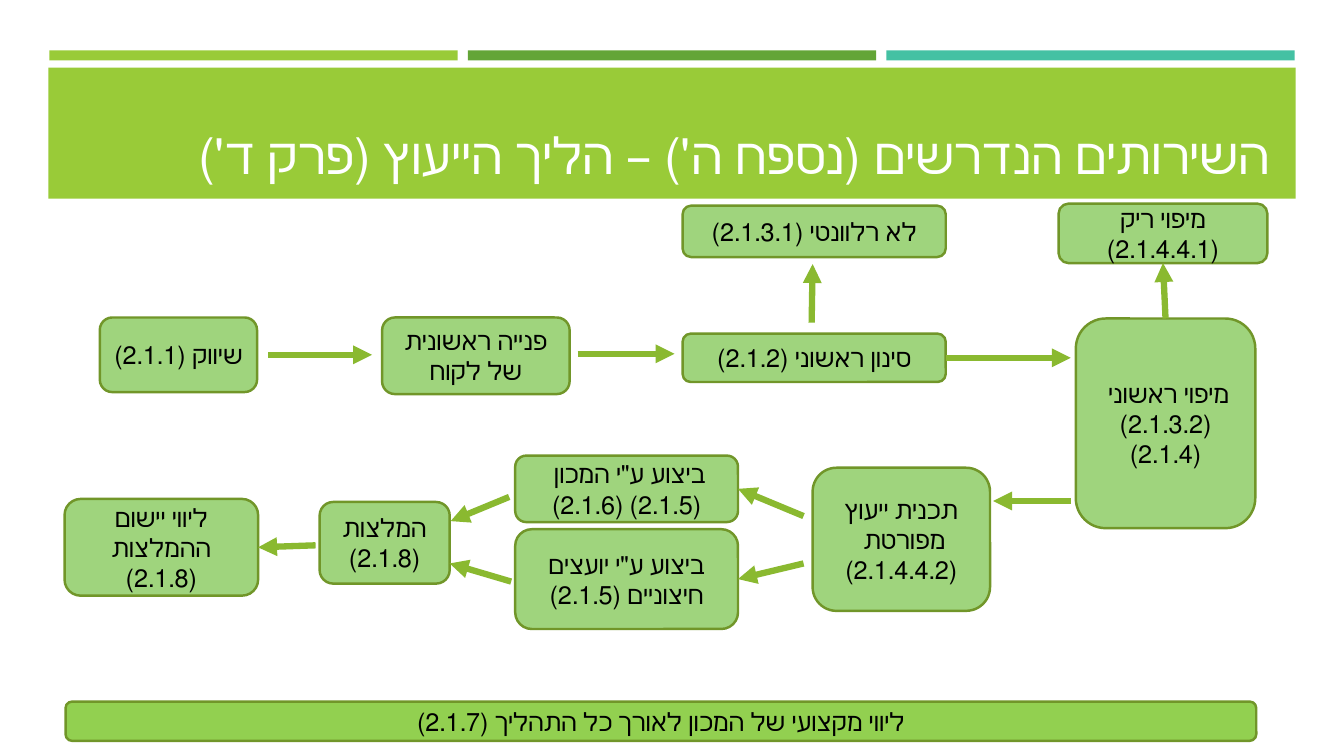
from lxml.etree import SubElement as Sub
from pptx import Presentation
from pptx.dml.color import RGBColor as Rgb
from pptx.enum.shapes import MSO_CONNECTOR as Link, MSO_SHAPE as Form
from pptx.enum.text import MSO_ANCHOR as Anchor, PP_ALIGN as Align
from pptx.oxml.ns import qn
from pptx.util import Inches, Pt

theme = {
    "lime": "99CB38", "green": "63A537", "teal": "44C1A3",
    "box": "9FD47D", "strip": "92D050", "edge": "719629", "arrow": "8AB930",
    "white": "FFFFFF", "black": "000000",
    "font": "Calibri", "head": Pt(36), "body": Pt(18),
    "rim": Pt(1.75), "stroke": Pt(4.5),
}


def draw(form, place, fill):
    shape = slide.shapes.add_shape(form, *map(Inches, place))
    shape.shadow.inherit = False
    shape.fill.solid()
    shape.fill.fore_color.rgb = Rgb.from_string(theme[fill])
    shape.line.fill.background()
    return shape


def write(shape, text, anchor, align, size, color):
    frame = shape.text_frame
    frame.text = text
    for name, value in {"word_wrap": True, "vertical_anchor": anchor}.items():
        setattr(frame, name, value)
    for para in frame.paragraphs:
        para.alignment = align
        para._p.get_or_add_pPr().set("rtl", "1")
        font = para.runs[0].font
        for name, value in {"name": theme["font"], "size": theme[size]}.items():
            setattr(font, name, value)
        font.color.rgb = Rgb.from_string(theme[color])


deck = Presentation()
deck.slide_width, deck.slide_height = Inches(13.33), Inches(7.5)
slide = deck.slides.add_slide(deck.slide_layouts[5])

# Header bars and band
for col, fill in enumerate(("lime", "green", "teal")):
    draw(Form.RECTANGLE, (0.49 + col * 4.15, 0.5, 4.05, 0.1), fill)
band = draw(Form.RECTANGLE, (0.48, 0.67, 12.37, 1.3), "lime")

# Title, brought in front of the band
title = slide.shapes.title
place = {"left": 0.64, "top": 0.77, "width": 12.06, "height": 1.11}
for name, value in place.items():
    setattr(title, name, Inches(value))
write(title, "השירותים הנדרשים (נספח ה') – הליך הייעוץ (פרק ד')",
      Anchor.BOTTOM, Align.RIGHT, "head", "white")
band._element.addnext(title._element)

# Process steps
steps = {
    "market": ((0.99, 3.15, 1.56, 0.74), "שיווק (2.1.1)"),
    "request": ((3.79, 3.15, 1.86, 0.76), "פנייה ראשונית של לקוח"),
    "screen": ((6.77, 3.31, 2.61, 0.48), "סינון ראשוני (2.1.2)"),
    "reject": ((6.77, 2.04, 2.61, 0.51), "לא רלוונטי (2.1.3.1)"),
    "map": ((10.67, 3.16, 1.78, 2.08), "מיפוי ראשוני \n(2.1.3.2)\n(2.1.4)"),
    "empty": ((10.5, 2.02, 2.07, 0.59), "מיפוי ריק (2.1.4.4.1)"),
    "plan": ((8.06, 4.64, 1.76, 1.42), "תכנית ייעוץ מפורטת \n(2.1.4.4.2)"),
    "inner": ((5.11, 4.52, 2.21, 0.66), 'ביצוע ע"י המכון \n(2.1.5) (2.1.6)'),
    "outer": ((5.11, 5.25, 2.21, 0.99), 'ביצוע ע"י יועצים חיצוניים (2.1.5)'),
    "advice": ((3.17, 4.98, 1.29, 0.81), "המלצות (2.1.8)"),
    "follow": ((0.64, 4.95, 1.92, 0.96), "ליווי יישום ההמלצות (2.1.8)"),
    "support": ((0.65, 6.96, 11.81, 0.39),
                "ליווי מקצועי של המכון לאורך כל התהליך (2.1.7)"),
}
boxes = {}
for key, (place, text) in steps.items():
    fill = "strip" if key == "support" else "box"
    box = boxes[key] = draw(Form.ROUNDED_RECTANGLE, place, fill)
    box.line.color.rgb = Rgb.from_string(theme["edge"])
    box.line.width = theme["rim"]
    write(box, text, Anchor.MIDDLE, Align.CENTER, "body", "black")

# Arrows: start, end, then the box sides they join
arrows = [
    ((2.66, 3.52), (3.69, 3.52), None, None),
    ((5.73, 3.51), (6.69, 3.51), None, None),
    ((9.38, 3.55), (10.62, 3.55), ("screen", 3), None),
    ((8.05, 3.2), (8.06, 2.62), None, None),
    ((11.56, 3.16), (11.53, 2.61), ("map", 0), ("empty", 2)),
    ((10.62, 4.97), (9.85, 4.97), None, None),
    ((7.97, 5.12), (7.32, 4.85), None, ("inner", 3)),
    ((7.97, 5.59), (7.32, 5.75), None, ("outer", 3)),
    ((5.05, 4.93), (4.47, 5.17), None, None),
    ((5.07, 5.77), (4.46, 5.59), None, None),
    ((3.13, 5.41), (2.56, 5.43), None, ("follow", 3)),
]
for start, end, tail, head in arrows:
    arrow = slide.shapes.add_connector(Link.STRAIGHT, *map(Inches, start + end))
    if tail:
        arrow.begin_connect(boxes[tail[0]], tail[1])
    if head:
        arrow.end_connect(boxes[head[0]], head[1])
    arrow.line.color.rgb = Rgb.from_string(theme["arrow"])
    arrow.line.width = theme["stroke"]
    Sub(arrow.line._get_or_add_ln(), qn("a:tailEnd"), type="triangle")
    Sub(arrow._element.spPr, qn("a:effectLst"))

deck.save("out.pptx")
